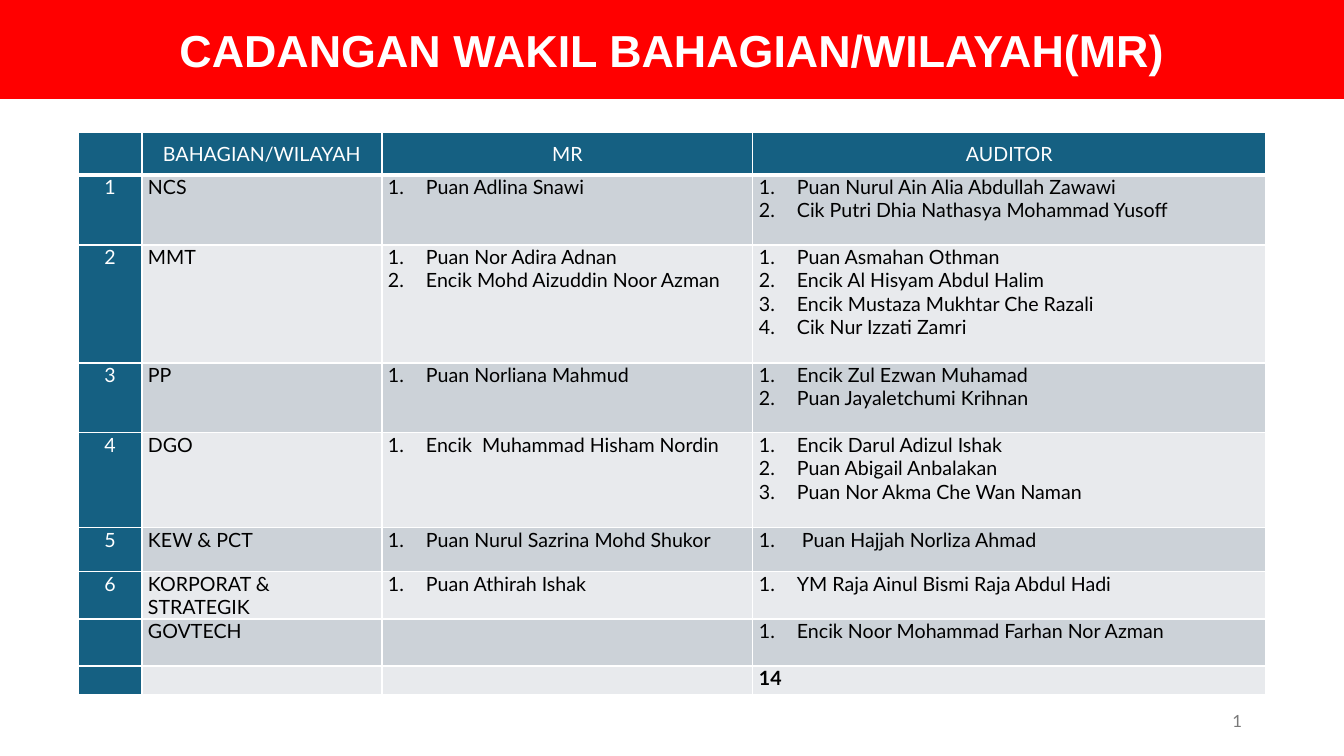
"""Builds the slide proposing division representatives and auditors."""
from lxml import etree
from pptx import Presentation
from pptx import util as u
from pptx.dml.color import RGBColor
from pptx.enum import shapes, text
from pptx.oxml.ns import qn

COLOURS = {
    "banner": "FF0000", "heading": "156082", "odd": "CCD2D8", "even": "E8EAED",
    "white": "FFFFFF", "black": "000000", "grey": "797979",
}
LEFT, CENTRE, RIGHT = text.PP_ALIGN.LEFT, text.PP_ALIGN.CENTER, text.PP_ALIGN.RIGHT
TOP, MIDDLE = text.MSO_ANCHOR.TOP, text.MSO_ANCHOR.MIDDLE


def px(length):
    return u.Inches(length / 100.8)


def write(frame, *lines, size=14, font="Lato", colour="black", bold=False,
          align=LEFT, numbered=False):
    frame.word_wrap = True
    for index, line in enumerate(lines):
        paragraph = frame.add_paragraph() if index else frame.paragraphs[0]
        paragraph.alignment = align
        if not line:
            etree.SubElement(paragraph._p, qn("a:endParaRPr"), sz=str(size * 100))
            continue
        if numbered:
            properties = paragraph._p.get_or_add_pPr()
            properties.set("marL", str(px(38)))
            properties.set("indent", str(-px(38)))
            etree.SubElement(properties, qn("a:buFont"), typeface="+mj-lt")
            etree.SubElement(properties, qn("a:buAutoNum"), type="arabicPeriod")
        run = paragraph.add_run()
        run.text = line
        run.font.size = u.Pt(size)
        run.font.name = font
        run.font.bold = bold
        run.font.color.rgb = RGBColor.from_string(COLOURS[colour])


deck = Presentation()
deck.slide_width, deck.slide_height = px(1344), px(756)
slide = deck.slides.add_slide(deck.slide_layouts[6])

page_number = slide.shapes.add_textbox(px(950), px(701), px(302), px(40))
page_number.text_frame.vertical_anchor = MIDDLE
write(page_number.text_frame, "1", size=12, colour="grey", align=RIGHT)

banner = slide.shapes.add_shape(shapes.MSO_SHAPE.RECTANGLE, 0, 0, px(1344), px(99))
banner.shadow.inherit = False
banner.fill.solid()
banner.fill.fore_color.rgb = RGBColor.from_string(COLOURS["banner"])
banner.line.fill.background()
banner.text_frame.vertical_anchor = MIDDLE
write(banner.text_frame, "CADANGAN WAKIL BAHAGIAN/WILAYAH(MR)", size=32,
      font="Arial", colour="white", bold=True, align=CENTRE)

headings = ["", "BAHAGIAN/WILAYAH", "MR", "AUDITOR"]
divisions = [
    ("1", "NCS", ["Puan Adlina Snawi"],
     ["Puan Nurul Ain Alia Abdullah Zawawi", "Cik Putri Dhia Nathasya Mohammad Yusoff"]),
    ("2", "MMT", ["Puan Nor Adira Adnan", "Encik Mohd Aizuddin Noor Azman"],
     ["Puan Asmahan Othman", "Encik Al Hisyam Abdul Halim",
      "Encik Mustaza Mukhtar Che Razali", "Cik Nur Izzati Zamri"]),
    ("3", "PP", ["Puan Norliana Mahmud"],
     ["Encik Zul Ezwan Muhamad", "Puan Jayaletchumi Krihnan"]),
    ("4", "DGO", ["Encik  Muhammad Hisham Nordin"],
     ["Encik Darul Adizul Ishak", "Puan Abigail Anbalakan", "Puan Nor Akma Che Wan Naman"]),
    ("5", "KEW & PCT", ["Puan Nurul Sazrina Mohd Shukor"], [" Puan Hajjah Norliza Ahmad"]),
    ("6", "KORPORAT & STRATEGIK", ["Puan Athirah Ishak"],
     ["YM Raja Ainul Bismi Raja Abdul Hadi"]),
    ("", "GOVTECH", [""], ["Encik Noor Mohammad Farhan Nor Azman"]),
    ("", "", [""], ["14"]),
]
column_widths = [64, 240, 371, 513]
row_heights = [43, 70, 118, 70, 95, 44, 47, 47, 29]
roster = slide.shapes.add_table(
    len(row_heights), len(column_widths), px(78), px(132),
    px(sum(column_widths)), px(sum(row_heights))).table
roster.first_row = roster.horz_banding = False
for column, width in zip(roster.columns, column_widths):
    column.width = px(width)
for row, height in zip(roster.rows, row_heights):
    row.height = px(height)

for r, row in enumerate([headings] + divisions):
    for c, content in enumerate(row):
        cell = roster.cell(r, c)
        cell.margin_left = cell.margin_right = px(6)
        cell.margin_top = cell.margin_bottom = 0
        cell.vertical_anchor = TOP if r else MIDDLE
        for side in ("lnL", "lnR", "lnT", "lnB"):
            points = 3 if r == 0 and side == "lnB" else 1
            border = etree.SubElement(cell._tc.get_or_add_tcPr(), qn("a:" + side),
                                      w=str(u.Pt(points)))
            paint = etree.SubElement(border, qn("a:solidFill"))
            etree.SubElement(paint, qn("a:srgbClr"), val=COLOURS["white"])
        heading = r == 0 or c == 0
        total = r == len(divisions) and c == 3
        band = "heading" if heading else "odd" if r % 2 else "even"
        cell.fill.solid()
        cell.fill.fore_color.rgb = RGBColor.from_string(COLOURS[band])
        lines = content if isinstance(content, list) else [content]
        write(cell.text_frame, *lines, colour="white" if heading else "black",
              bold=total, align=CENTRE if heading else LEFT,
              numbered=isinstance(content, list) and not total)

deck.save("out.pptx")
